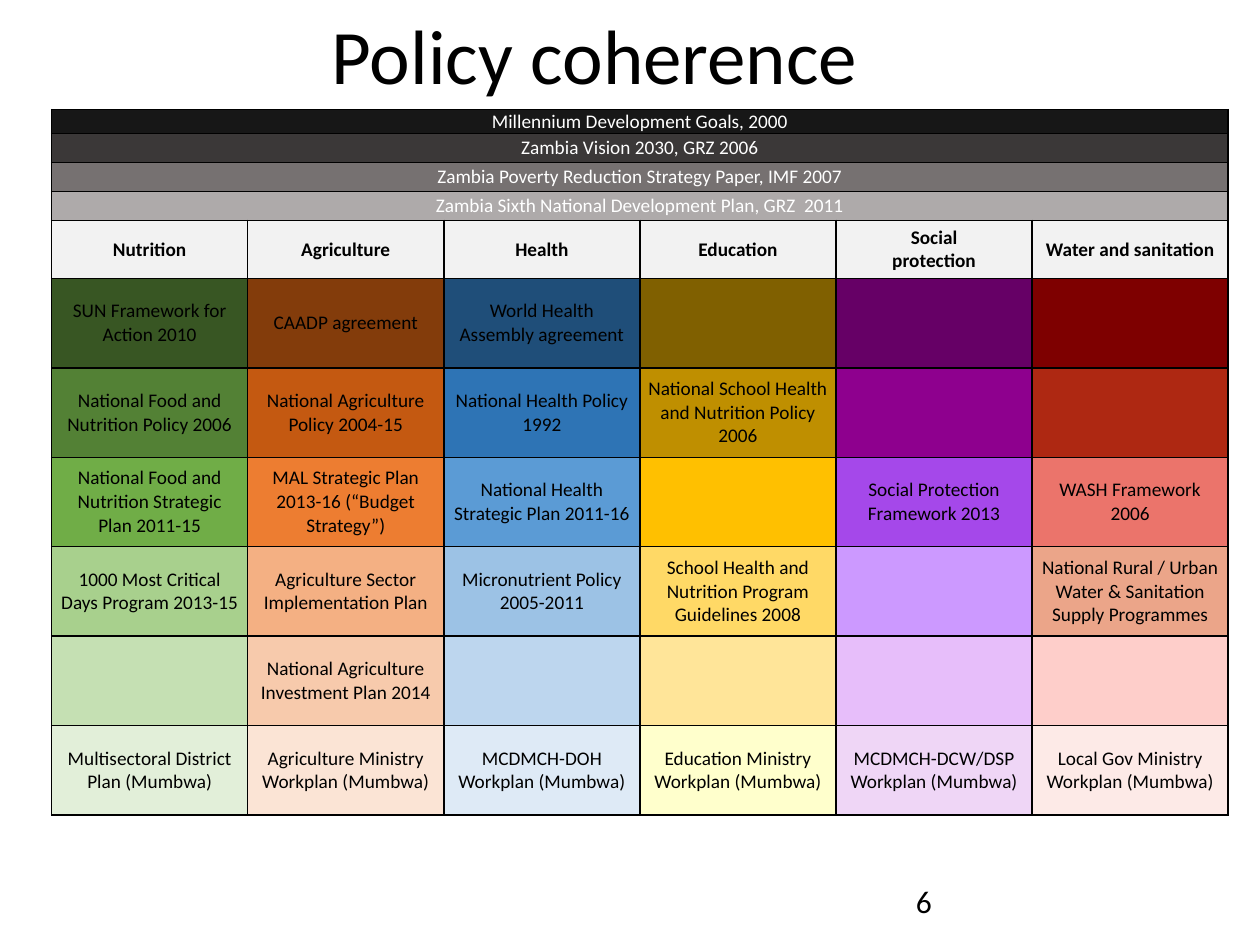
from lxml.etree import SubElement as Sub
from pptx import Presentation
from pptx.dml.color import RGBColor
from pptx.enum.text import MSO_ANCHOR as Anchor, PP_ALIGN as Align
from pptx.oxml.ns import qn
from pptx.util import Inches, Pt

BLACK, WHITE = "000000", "FFFFFF"

goals = [
    ("Millennium Development Goals, 2000", "171717"),
    ("Zambia Vision 2030, GRZ 2006", "3B3838"),
    ("Zambia Poverty Reduction Strategy Paper, IMF 2007", "767171"),
    ("Zambia Sixth National Development Plan, GRZ  2011", "AEAAAA"),
]
heads = ["Nutrition", "Agriculture", "Health", "Education",
         "Social\nprotection", "Water and sanitation"]
plans = [
    ["SUN Framework for Action 2010", "CAADP agreement",
     "World Health Assembly agreement", "", "", ""],
    ["National Food and Nutrition Policy 2006",
     "National Agriculture Policy 2004-15",
     "National Health Policy 1992",
     "National School Health and Nutrition Policy 2006", "", ""],
    ["National Food and Nutrition Strategic Plan 2011-15",
     "MAL Strategic Plan 2013-16 (“Budget Strategy”)",
     "National Health Strategic Plan 2011-16", "",
     "Social Protection Framework 2013", "WASH Framework 2006"],
    ["1000 Most Critical Days Program 2013-15",
     "Agriculture Sector Implementation Plan",
     "Micronutrient Policy 2005-2011",
     "School Health and Nutrition Program Guidelines 2008", "",
     "National Rural / Urban Water & Sanitation Supply Programmes"],
    ["", "National Agriculture Investment Plan 2014", "", "", "", ""],
    ["Multisectoral District Plan (Mumbwa)",
     "Agriculture Ministry Workplan (Mumbwa)",
     "MCDMCH-DOH Workplan (Mumbwa)",
     "Education Ministry Workplan (Mumbwa)",
     "MCDMCH-DCW/DSP Workplan (Mumbwa)",
     "Local Gov Ministry Workplan (Mumbwa)"],
]
# One list of shades per sector, from dark to light
shades = [
    ["385623", "538135", "70AD47", "A8D08D", "C5E0B3", "E2EFD9"],
    ["833C0B", "C45911", "ED7D31", "F4B083", "F7CAAC", "FBE4D5"],
    ["1F4E79", "2E74B5", "5B9BD5", "9CC2E5", "BDD6EE", "DEEAF6"],
    ["806000", "BF8F00", "FFC000", "FFD966", "FFE599", "FFFFCC"],
    ["660066", "8E008E", "A548EA", "CC99FF", "E7BEFA", "EFD6F6"],
    ["7E0000", "AE2812", "EB746B", "EBA589", "FECECA", "FDEAE7"],
]


def paint(fmt, color):
    """Give a fill or a font a solid hex colour."""
    if hasattr(fmt, "solid"):
        fmt.solid()
        fmt.fore_color.rgb = RGBColor.from_string(color)
    else:
        fmt.color.rgb = RGBColor.from_string(color)


def write(frame, text, size, color=BLACK, align=Align.CENTER, bold=False):
    """Fill the first paragraph run by run, breaking at each newline."""
    frame.word_wrap = True
    frame.vertical_anchor = Anchor.MIDDLE
    para = frame.paragraphs[0]
    para.alignment = align
    for i, part in enumerate(text.split("\n")):
        if i:
            para.add_line_break()
        run = para.add_run()
        run.text = part
        run.font.name = "Calibri"
        run.font.size = Pt(size)
        run.font.bold = bold
        paint(run.font, color)


deck = Presentation()
deck.slide_width, deck.slide_height = Inches(10), Inches(7.5)
slide = deck.slides.add_slide(deck.slide_layouts[6])
shapes = slide.shapes

title = shapes.add_textbox(Inches(0.41), Inches(0), Inches(8.62), Inches(0.86))
write(title.text_frame, "Policy coherence", 44)

number = shapes.add_textbox(Inches(7.17), Inches(6.95), Inches(2.33), Inches(0.4))
write(number.text_frame, "6", 18, align=Align.LEFT)

# Each row: its height, and a (text, fill) pair for each cell
rows = [(0.23 if i else 0.19, [goal] + [("", goal[1])] * 5)
        for i, goal in enumerate(goals)]
rows.append((0.46, [(head, "F2F2F2") for head in heads]))
rows += [(0.71, list(zip(plan, tones))) for plan, tones in zip(plans, zip(*shades))]

high = sum(row[0] for row in rows)
table = shapes.add_table(len(rows), len(heads), Inches(0.41), Inches(0.87),
                         Inches(9.34), Inches(high)).table
table.first_row = table.horz_banding = False
for col in table.columns:
    col.width = Inches(9.34 / len(heads))

for r, (height, cells) in enumerate(rows):
    table.rows[r].height = Inches(height)
    is_goal, is_head = r < len(goals), r == len(goals)
    for c, (text, tone) in enumerate(cells):
        cell = table.cell(r, c)
        cell.margin_left = cell.margin_right = Inches(0.06)
        cell.margin_top = cell.margin_bottom = 0
        cell.vertical_anchor = Anchor.MIDDLE
        props = cell._tc.get_or_add_tcPr()
        for side in ("lnL", "lnR", "lnT", "lnB"):
            line = Sub(props, qn("a:" + side), w=str(Pt(1)))
            Sub(Sub(line, qn("a:solidFill")), qn("a:srgbClr"), val=BLACK)
        paint(cell.fill, tone)
        if text:
            write(cell.text_frame, text, 11, WHITE if is_goal else BLACK,
                  bold=is_head)
        else:
            cell.text_frame.paragraphs[0].font.size = Pt(11)
    if is_goal:
        table.cell(r, 0).merge(table.cell(r, len(heads) - 1))

deck.save("out.pptx")
